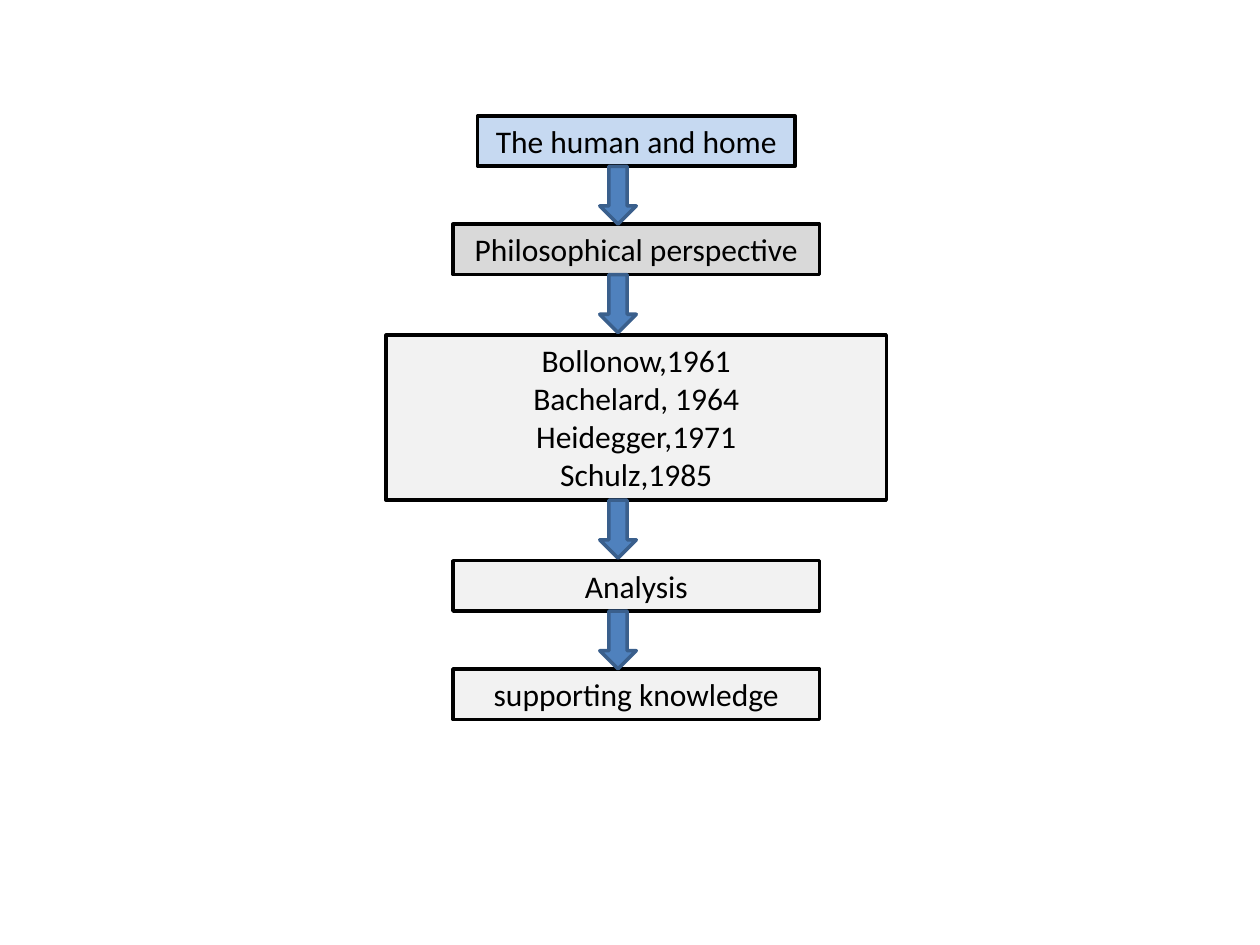
from pptx import Presentation
from pptx.dml.color import RGBColor
from pptx.enum.shapes import MSO_SHAPE
from pptx.enum.text import MSO_ANCHOR, PP_ALIGN
from pptx.util import Inches, Pt

BLACK = RGBColor(0x00, 0x00, 0x00)
LIGHT_BLUE = RGBColor(0xC6, 0xD9, 0xF1)
MID_GRAY = RGBColor(0xD9, 0xD9, 0xD9)
LIGHT_GRAY = RGBColor(0xF2, 0xF2, 0xF2)
ARROW_FILL = RGBColor(0x4F, 0x81, 0xBD)
ARROW_LINE = RGBColor(0x3A, 0x5F, 0x8C)

BOX_CENTER = 5.05
ARROW_LEFT, ARROW_WIDTH, ARROW_HEIGHT = 4.76, 0.29, 0.46

STEPS = [
    ("The human and home", 0.92, 2.52, 0.4, LIGHT_BLUE),
    ("Philosophical perspective", 1.78, 2.91, 0.4, MID_GRAY),
    ("Bollonow,1961\nBachelard, 1964\nHeidegger,1971\nSchulz,1985", 2.66, 3.97, 1.31, LIGHT_GRAY),
    ("Analysis", 4.45, 2.91, 0.4, LIGHT_GRAY),
    ("supporting knowledge", 5.31, 2.91, 0.4, LIGHT_GRAY),
]


class FlowSlide:
    font_name = "Calibri"
    font_size = Pt(18)
    line_width = Pt(2)

    def __init__(self, slide):
        self.slide = slide

    def add_outlined(self, kind, left, top, width, height, fill, line):
        shape = self.slide.shapes.add_shape(
            kind, Inches(left), Inches(top), Inches(width), Inches(height))
        shape.shadow.inherit = False
        shape.fill.solid()
        shape.fill.fore_color.rgb = fill
        shape.line.color.rgb = line
        shape.line.width = self.line_width
        return shape

    def add_box(self, text, top, width, height, fill):
        shape = self.add_outlined(
            MSO_SHAPE.RECTANGLE, BOX_CENTER - width / 2, top, width, height, fill, BLACK)
        text_frame = shape.text_frame
        text_frame.word_wrap = True
        text_frame.vertical_anchor = MSO_ANCHOR.TOP
        text_frame.text = text
        for paragraph in text_frame.paragraphs:
            paragraph.alignment = PP_ALIGN.CENTER
            for run in paragraph.runs:
                run.font.name = self.font_name
                run.font.size = self.font_size
                run.font.color.rgb = BLACK

    def add_arrow(self, top):
        self.add_outlined(MSO_SHAPE.DOWN_ARROW, ARROW_LEFT, top,
                          ARROW_WIDTH, ARROW_HEIGHT, ARROW_FILL, ARROW_LINE)


def main():
    presentation = Presentation()
    presentation.slide_width = Inches(10)
    presentation.slide_height = Inches(7.5)
    blank_layout = presentation.slide_layouts[6]
    flow = FlowSlide(presentation.slides.add_slide(blank_layout))
    for step in STEPS:
        flow.add_box(*step)
    for _, top, _, height, _ in STEPS[:-1]:
        flow.add_arrow(top + height)
    presentation.save("out.pptx")


if __name__ == "__main__":
    main()
